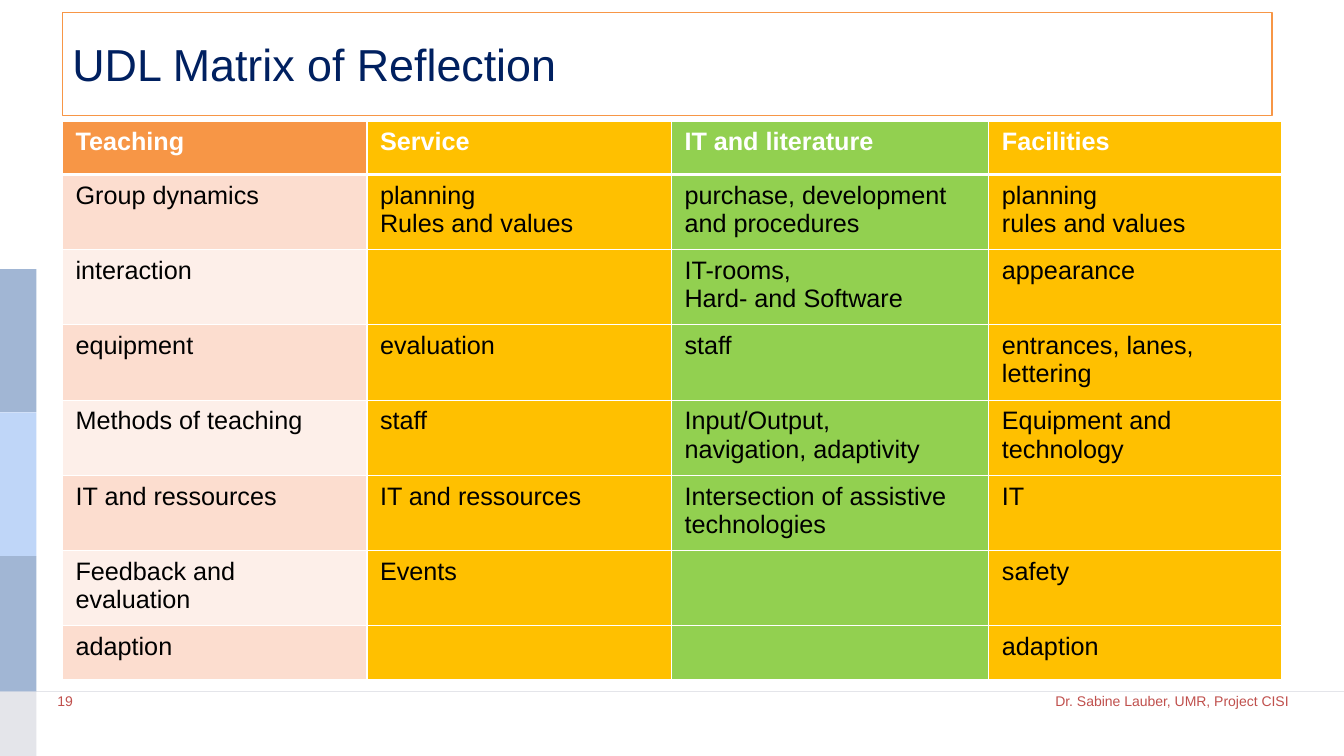
import pptx
import pptx.dml.color
import pptx.enum.shapes
import pptx.enum.text
import pptx.oxml
import pptx.oxml.ns
import pptx.util
from lxml import etree

RGBColor = pptx.dml.color.RGBColor
Pt = pptx.util.Pt
Align = pptx.enum.text.PP_ALIGN
Anchor = pptx.enum.text.MSO_ANCHOR

WHITE = RGBColor(0xFF, 0xFF, 0xFF)
BLACK = RGBColor(0x00, 0x00, 0x00)
NAVY = RGBColor(0x00, 0x20, 0x60)
RED = RGBColor(0xC0, 0x50, 0x4D)
ORANGE = RGBColor(0xF7, 0x96, 0x46)
AMBER = RGBColor(0xFF, 0xC0, 0x00)
GREEN = RGBColor(0x92, 0xD0, 0x50)
PEACH = RGBColor(0xFC, 0xDD, 0xCF)
PALE_PEACH = RGBColor(0xFD, 0xEF, 0xE9)
STEEL = RGBColor(0xA1, 0xB6, 0xD4)
SKY = RGBColor(0xBF, 0xD6, 0xF8)
MIST = RGBColor(0xE4, 0xE5, 0xEA)

SLIDE_WIDTH, SLIDE_HEIGHT = 960, 540
FOOTER_TOP = 494
BAND_WIDTH = 26
BAND_EDGES = [192.25, 294.5, 397.25, FOOTER_TOP, SLIDE_HEIGHT]
BAND_COLORS = [STEEL, SKY, STEEL, MIST]
CONTENT_LEFT = 44.64
COLUMN_WIDTHS = [217.5, 217.5, 226.75, 208.75]
ROW_HEIGHTS = [38.2] + [53.75] * 6 + [38.2]
MATRIX = [
    ["Teaching", "Service", "IT and literature", "Facilities"],
    ["Group dynamics", "planning\nRules and values",
     "purchase, development and procedures", "planning\nrules and values"],
    ["interaction", "", "IT-rooms, \vHard- and Software", "appearance"],
    ["equipment", "evaluation", "staff", "entrances, lanes, lettering"],
    ["Methods of teaching", "staff", "Input/Output, \vnavigation, adaptivity",
     "Equipment and technology"],
    ["IT and ressources", "IT and ressources",
     "Intersection of assistive technologies", "IT"],
    ["Feedback and evaluation", "Events", "", "safety"],
    ["adaption", "", "", "adaption"],
]


class MatrixSlide:
    """Draws styled elements, measured in points, on one slide."""

    font_name = "Arial"

    def __init__(self, slide):
        self.slide = slide

    def box(self, left, top, width, height):
        return Pt(left), Pt(top), Pt(width), Pt(height)

    def style_text(self, text_frame, text, size, color, bold=False, align=Align.LEFT):
        text_frame.text = text
        text_frame.word_wrap = True
        for paragraph in text_frame.paragraphs:
            paragraph.alignment = align
            paragraph.font.size = Pt(size)
            for run in paragraph.runs:
                run.font.name = self.font_name
                run.font.size = Pt(size)
                run.font.bold = bold
                run.font.color.rgb = color

    def rectangle(self, left, top, width, height, fill=None, line=None):
        shape = self.slide.shapes.add_shape(
            pptx.enum.shapes.MSO_SHAPE.RECTANGLE, *self.box(left, top, width, height))
        shape.shadow.inherit = False
        if fill is None:
            shape.fill.background()
        else:
            shape.fill.solid()
            shape.fill.fore_color.rgb = fill
        if line is None:
            shape.line.fill.background()
        else:
            shape.line.color.rgb = line
            shape.line.width = Pt(0.75)
        return shape

    def title(self, text, left, top, width, height):
        shape = self.rectangle(left, top, width, height, line=ORANGE)
        shape.text_frame.vertical_anchor = Anchor.MIDDLE
        self.style_text(shape.text_frame, text, 32, NAVY)

    def footer(self, text, left, width, align):
        shape = self.slide.shapes.add_textbox(*self.box(left, 491, width, 37.5))
        self.style_text(shape.text_frame, text, 10, RED, align=align)

    def rule(self, top):
        connector = self.slide.shapes.add_connector(
            pptx.enum.shapes.MSO_CONNECTOR.STRAIGHT,
            Pt(0), Pt(top), Pt(SLIDE_WIDTH), Pt(top))
        connector.line.color.rgb = MIST
        connector.line.width = Pt(0.5)
        etree.SubElement(connector._element.spPr, pptx.oxml.ns.qn("a:effectLst"))

    def borders(self, cell, widths):
        properties = cell._tc.get_or_add_tcPr()
        for side, width in widths.items():
            properties.append(pptx.oxml.parse_xml(
                f'<a:ln{side} {pptx.oxml.ns.nsdecls("a")} w="{Pt(width)}">'
                f'<a:solidFill><a:srgbClr val="{WHITE}"/></a:solidFill></a:ln{side}>'))

    def cell(self, cell, text, fill, row):
        is_header = row == 0
        cell.margin_left = cell.margin_right = Pt(9.36)
        cell.margin_top = cell.margin_bottom = Pt(5)
        self.borders(cell, {"L": 1, "R": 1, "T": 3 if row == 1 else 1,
                            "B": 3 if is_header else 1})
        cell.fill.solid()
        cell.fill.fore_color.rgb = fill
        self.style_text(cell.text_frame, text, 18, WHITE if is_header else BLACK, is_header)

    def matrix(self, rows, left, top):
        table = self.slide.shapes.add_table(
            len(rows), len(COLUMN_WIDTHS),
            *self.box(left, top, sum(COLUMN_WIDTHS), sum(ROW_HEIGHTS))).table
        table.horz_banding = False
        for column, width in zip(table.columns, COLUMN_WIDTHS):
            column.width = Pt(width)
        for row, (texts, height) in enumerate(zip(rows, ROW_HEIGHTS)):
            table.rows[row].height = Pt(height)
            teaching = ORANGE if row == 0 else PEACH if row % 2 else PALE_PEACH
            for column, fill in enumerate([teaching, AMBER, GREEN, AMBER]):
                self.cell(table.cell(row, column), texts[column], fill, row)


def main():
    presentation = pptx.Presentation()
    presentation.slide_width = Pt(SLIDE_WIDTH)
    presentation.slide_height = Pt(SLIDE_HEIGHT)
    page = MatrixSlide(presentation.slides.add_slide(presentation.slide_layouts[6]))

    page.rule(FOOTER_TOP)
    for top, bottom, color in zip(BAND_EDGES, BAND_EDGES[1:], BAND_COLORS):
        page.rectangle(0, top, BAND_WIDTH, bottom - top, fill=color)
    page.title("UDL Matrix of Reflection", CONTENT_LEFT, 9, 864, 73.5)
    page.footer("Dr. Sabine Lauber, UMR, Project CISI", 623.5, 304, Align.RIGHT)
    page.footer("19", 34, 224, Align.LEFT)
    page.matrix(MATRIX, CONTENT_LEFT, 86.4)

    presentation.save("out.pptx")


if __name__ == "__main__":
    main()
